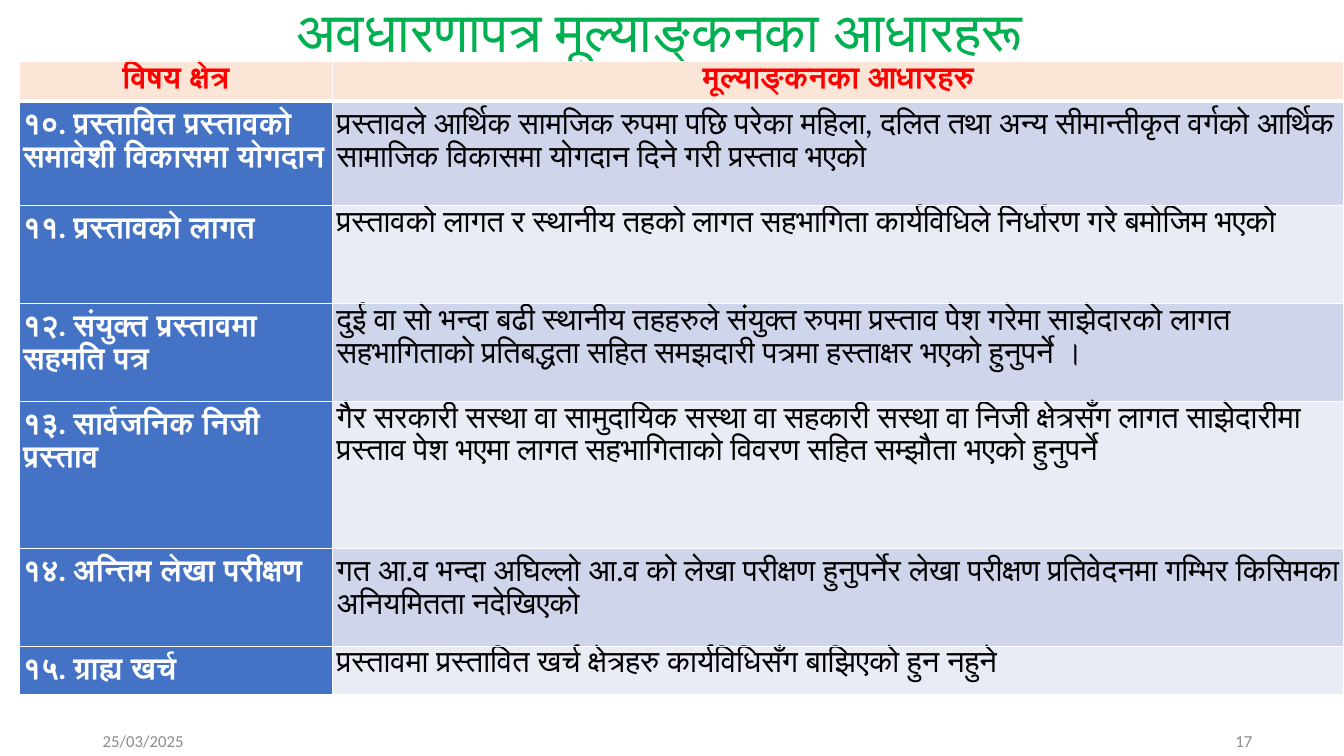
from lxml import etree
from pptx import Presentation
from pptx.dml.color import RGBColor
from pptx.enum.text import MSO_ANCHOR as ANCHOR, PP_ALIGN as ALIGN
from pptx.oxml.ns import qn
from pptx.util import Inches, Pt

COLORS = {
    "title": "00B050", "header_text": "FF0000", "header_fill": "FBE5D6",
    "topic_text": "FFFFFF", "topic_fill": "4472C4", "basis_text": "000000",
    "odd_fill": "CFD5EA", "even_fill": "E9EBF5", "border": "FFFFFF",
    "footer": "8C8C8C",
}
HEADERS = ("विषय क्षेत्र", "मूल्याङ्कनका आधारहरु")
# Topic, basis of evaluation, row height
CRITERIA = [
    ("१०. प्रस्तावित प्रस्तावको समावेशी विकासमा योगदान",
     "प्रस्तावले आर्थिक सामजिक रुपमा पछि परेका महिला, दलित तथा अन्य सीमान्तीकृत वर्गको "
     "आर्थिक सामाजिक विकासमा योगदान दिने गरी प्रस्ताव भएको", 1.04),
    ("११. प्रस्तावको लागत",
     "प्रस्तावको लागत र स्थानीय तहको लागत सहभागिता कार्यविधिले निर्धारण गरे बमोजिम भएको", 0.97),
    ("१२. संयुक्त प्रस्तावमा सहमति पत्र",
     "दुई वा सो भन्दा बढी स्थानीय तहहरुले संयुक्त रुपमा प्रस्ताव पेश गरेमा साझेदारको लागत "
     "सहभागिताको प्रतिबद्धता सहित समझदारी पत्रमा हस्ताक्षर भएको हुनुपर्ने ।", 0.97),
    ("१३. सार्वजनिक निजी प्रस्ताव",
     "गैर सरकारी सस्था वा सामुदायिक सस्था वा सहकारी सस्था वा निजी क्षेत्रसँग लागत साझेदारीमा "
     "प्रस्ताव पेश भएमा लागत सहभागिताको विवरण सहित सम्झौता भएको हुनुपर्ने", 1.46),
    ("१४. अन्तिम लेखा परीक्षण",
     "गत आ.व भन्दा अघिल्लो आ.व को लेखा परीक्षण हुनुपर्नेर लेखा परीक्षण प्रतिवेदनमा "
     "गम्भिर किसिमका अनियमितता नदेखिएको", 0.97),
    ("१५. ग्राह्य खर्च",
     "प्रस्तावमा प्रस्तावित खर्च क्षेत्रहरु कार्यविधिसँग बाझिएको हुन नहुने", 0.48),
]


def rgb(name):
    return RGBColor.from_string(COLORS[name])


def write(tf, text, size, font, color, align=ALIGN.LEFT, bold=False, spacing=1.0):
    tf.text = text
    p = tf.paragraphs[0]
    p.alignment, p.line_spacing = align, spacing
    f = p.runs[0].font
    f.size, f.name, f.bold = Pt(size), font, bold
    f.color.rgb = rgb(color)


def add_text(s, box, text, size, font, color, align=ALIGN.LEFT, spacing=1.0):
    tf = s.shapes.add_textbox(*map(Inches, box)).text_frame
    tf.word_wrap = True
    tf.vertical_anchor = ANCHOR.MIDDLE
    write(tf, text, size, font, color, align, spacing=spacing)


def set_borders(cell, bottom):
    tc_pr = cell._tc.get_or_add_tcPr()
    for i, (side, width) in enumerate((("L", 1), ("R", 1), ("T", 1), ("B", bottom))):
        ln = etree.Element(qn(f"a:ln{side}"), w=str(Pt(width)))
        fill = etree.SubElement(ln, qn("a:solidFill"))
        etree.SubElement(fill, qn("a:srgbClr"), val=COLORS["border"])
        tc_pr.insert(i, ln)


def fill_cell(cell, text, fill, font, color, align=ALIGN.LEFT, bold=False, bottom=1):
    cell.margin_left = cell.margin_right = Inches(0.04)
    cell.margin_top = cell.margin_bottom = 0
    cell.fill.solid()
    cell.fill.fore_color.rgb = rgb(fill)
    write(cell.text_frame, text, 22, font, color, align, bold, 1.07)
    set_borders(cell, bottom)


def add_criteria_table(s, left, top, widths):
    heights = [0.32] + [row[2] for row in CRITERIA]
    table = s.shapes.add_table(len(heights), len(widths), Inches(left), Inches(top),
                               Inches(sum(widths)), Inches(sum(heights))).table
    for col, width in zip(table.columns, widths):
        col.width = Inches(width)
    for row, height in zip(table.rows, heights):
        row.height = Inches(height)
    # Header row
    for c, text in enumerate(HEADERS):
        fill_cell(table.cell(0, c), text, "header_fill", "Calibri", "header_text",
                  ALIGN.CENTER, True, bottom=3)
    # Criteria rows
    for r, (topic, basis, _) in enumerate(CRITERIA, 1):
        fill_cell(table.cell(r, 0), topic, "topic_fill", "Lato", "topic_text", bold=True)
        fill_cell(table.cell(r, 1), basis, "odd_fill" if r % 2 else "even_fill",
                  "Lato", "basis_text")


def add_footer(s, left, top, right):
    width, height = 3, 0.4
    add_text(s, (left, top, width, height), "25/03/2025", 12, "Calibri", "footer")
    add_text(s, (right - width, top, width, height), "17", 12, "Calibri", "footer", ALIGN.RIGHT)


def main():
    prs = Presentation()
    prs.slide_width, prs.slide_height = Inches(13.33), Inches(7.5)
    s = prs.slides.add_slide(prs.slide_layouts[6])
    add_text(s, (1.38, 0.07, 10.33, 0.54), "अवधारणापत्र मूल्याङ्कनका आधारहरू",
             40, "Lato", "title", ALIGN.CENTER, 0.9)
    add_criteria_table(s, 0.19, 0.61, (3.11, 10.03))
    add_footer(s, 0.92, 7.15, 12.52)
    prs.save("out.pptx")


if __name__ == "__main__":
    main()
